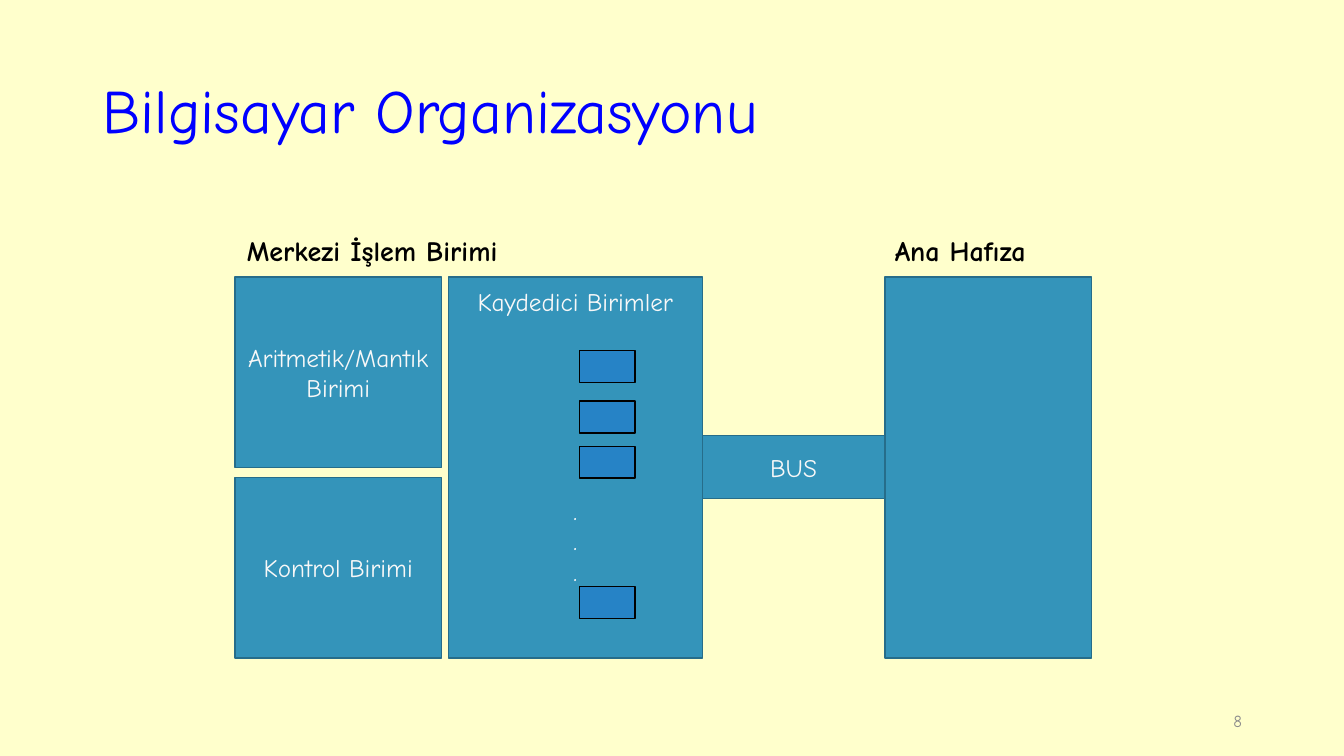
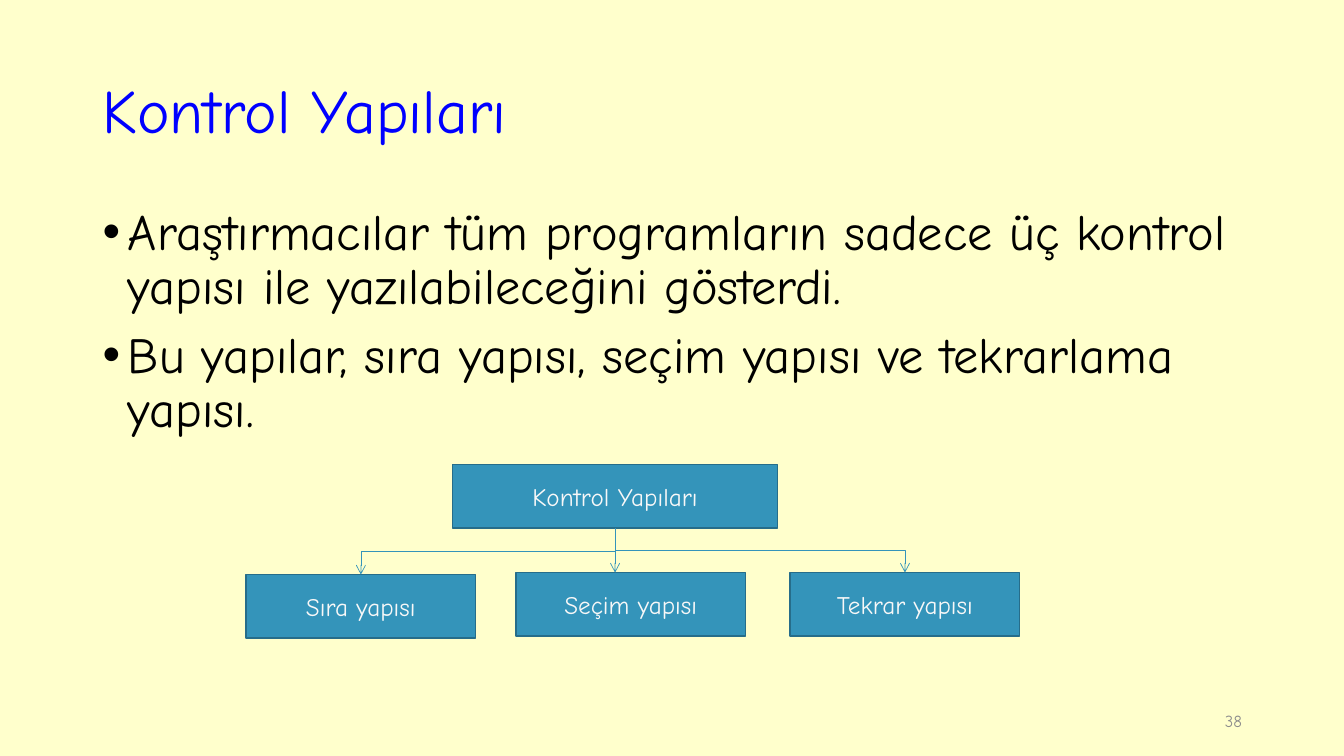
from dataclasses import dataclass

from lxml.etree import SubElement
from pptx import Presentation
from pptx.dml.color import RGBColor
from pptx.enum.shapes import MSO_CONNECTOR, MSO_SHAPE
from pptx.enum.text import MSO_ANCHOR, MSO_AUTO_SIZE, PP_ALIGN
from pptx.oxml.ns import qn
from pptx.shapes.autoshape import Shape
from pptx.shapes.shapetree import GroupShapes, SlideShapes
from pptx.slide import Slide
from pptx.text.text import TextFrame, _Paragraph
from pptx.util import Cm, Pt


@dataclass(frozen=True)
class Theme:
    font: str = "Comic Neue"
    background: str = "FFFFCC"
    title: str = "0000FF"
    text: str = "000000"
    box: str = "3494BA"
    box_line: str = "266D8A"
    box_text: str = "F8F8F8"
    register: str = "2683C6"
    number: str = "8C8C8C"
    title_size: int = 44
    body_size: int = 36
    label_size: int = 20
    box_size: int = 18
    number_size: int = 12


@dataclass(frozen=True)
class Box:
    """A rectangle measured in centimetres, with an optional text."""
    left: float
    top: float
    width: float
    height: float
    text: str = ""

    @property
    def center(self) -> float:
        return self.left + self.width / 2

    @property
    def bottom(self) -> float:
        return self.top + self.height

    def lengths(self) -> tuple[Cm, Cm, Cm, Cm]:
        return Cm(self.left), Cm(self.top), Cm(self.width), Cm(self.height)


Shapes = SlideShapes | GroupShapes
THEME = Theme()
TITLE = Box(2.33, 1.02, 29.21, 3.68)
BODY = Box(2.33, 5.08, 29.21, 12.09)
NUMBER = Box(23.93, 17.65, 7.62, 1.02)

ALU = Box(5.92, 6.98, 5.21, 4.8, "Aritmetik/Mantık Birimi")
CONTROL = Box(5.92, 12.04, 5.21, 4.54, "Kontrol Birimi")
REGISTERS = Box(11.3, 6.98, 6.4, 9.6, "Kaydedici Birimler")
BUS = Box(17.7, 10.97, 4.6, 1.6, "BUS")
MEMORY = Box(22.3, 6.98, 5.21, 9.6)
LABELS = [
    Box(5.97, 5.77, 9.3, 1.12, "Merkezi İşlem Birimi"),
    Box(22.3, 5.77, 5.21, 1.12, "Ana Hafıza"),
]
REGISTER_TOPS = [8.84, 10.11, 11.25, 14.78]

STRUCTURES = Box(11.4, 11.71, 8.2, 1.6, "Kontrol Yapıları")
STRUCTURE_KINDS = [
    Box(6.2, 14.48, 5.79, 1.6, "Sıra yapısı"),
    Box(13, 14.43, 5.79, 1.6, "Seçim yapısı"),
    Box(19.91, 14.43, 5.79, 1.6, "Tekrar yapısı"),
]
BULLETS = [
    "Araştırmacılar tüm programların sadece üç kontrol yapısı ile yazılabileceğini gösterdi.",
    "Bu yapılar, sıra yapısı, seçim yapısı ve tekrarlama yapısı.",
]


def add_run(p: _Paragraph, text: str, size: int, color: str, bold: bool = False) -> None:
    r = p.add_run()
    r.text = text
    r.font.name = THEME.font
    r.font.size = Pt(size)
    r.font.bold = bold
    r.font.color.rgb = RGBColor.from_string(color)


def add_paragraph(tf: TextFrame, first: bool) -> _Paragraph:
    return tf.paragraphs[0] if first else tf.add_paragraph()


def add_box(shapes: Shapes, box: Box, fill: str = THEME.box, line: str = THEME.box_line) -> Shape:
    sp = shapes.add_shape(MSO_SHAPE.RECTANGLE, *box.lengths())
    sp.shadow.inherit = False
    sp.fill.solid()
    sp.fill.fore_color.rgb = RGBColor.from_string(fill)
    sp.line.color.rgb = RGBColor.from_string(line)
    sp.line.width = Pt(1)
    tf = sp.text_frame
    tf.word_wrap = True
    tf.vertical_anchor = MSO_ANCHOR.MIDDLE
    if box.text:
        p = tf.paragraphs[0]
        p.alignment = PP_ALIGN.CENTER
        add_run(p, box.text, THEME.box_size, THEME.box_text)
    return sp


def add_text(shapes: Shapes, box: Box, size: int, color: str, bold: bool = False) -> TextFrame:
    tf = shapes.add_textbox(*box.lengths()).text_frame
    tf.word_wrap = True
    add_run(tf.paragraphs[0], box.text, size, color, bold)
    return tf


def add_arrow(shapes: Shapes, start: Box, end: Box) -> None:
    """Link two boxes downwards: straight if end lies under start's centre, else bent."""
    x1, y1, y2 = start.center, start.bottom, end.top
    if end.left <= x1 <= end.left + end.width:
        c = shapes.add_connector(MSO_CONNECTOR.STRAIGHT, Cm(x1), Cm(y1), Cm(x1), Cm(y2))
    else:
        # An elbow starts sideways, so it is drawn lying down and turned about its centre.
        x2 = end.center
        mid_x, mid_y = (x1 + x2) / 2, (y1 + y2) / 2
        half_w, half_h = (y2 - y1) / 2, abs(x2 - x1) / 2
        side = 1 if x2 < x1 else -1
        c = shapes.add_connector(
            MSO_CONNECTOR.ELBOW,
            Cm(mid_x - side * half_w), Cm(mid_y - half_h),
            Cm(mid_x + side * half_w), Cm(mid_y + half_h),
        )
        turn = 90 if side == 1 else 270
        c._element.spPr.find(qn("a:xfrm")).set("rot", str(turn * 60000))
    c.line.color.rgb = RGBColor.from_string(THEME.box)
    c.line.width = Pt(0.5)
    SubElement(c.line._get_or_add_ln(), qn("a:tailEnd"), type="arrow")
    SubElement(c._element.spPr, qn("a:effectLst"))


def place(sp: Shape, box: Box, anchor: MSO_ANCHOR) -> TextFrame:
    """Move a placeholder and return its text frame, ready to fill."""
    sp.left, sp.top, sp.width, sp.height = box.lengths()
    tf = sp.text_frame
    tf.word_wrap = True
    tf.auto_size = MSO_AUTO_SIZE.NONE
    tf.vertical_anchor = anchor
    return tf


def add_slide(prs: Presentation, layout: str, title: str, number: int) -> Slide:
    s = prs.slides.add_slide(prs.slide_layouts.get_by_name(layout))
    p = place(s.shapes.title, TITLE, MSO_ANCHOR.MIDDLE).paragraphs[0]
    p.alignment = PP_ALIGN.LEFT
    p.line_spacing = 0.9
    add_run(p, title, THEME.title_size, THEME.title)

    box = Box(NUMBER.left, NUMBER.top, NUMBER.width, NUMBER.height, str(number))
    tf = add_text(s.shapes, box, THEME.number_size, THEME.number)
    tf.vertical_anchor = MSO_ANCHOR.MIDDLE
    tf.paragraphs[0].alignment = PP_ALIGN.RIGHT
    return s


def fill_bullets(s: Slide, bullets: list[str]) -> None:
    tf = place(s.placeholders[1], BODY, MSO_ANCHOR.TOP)
    for i, text in enumerate(bullets):
        p = add_paragraph(tf, i == 0)
        p.line_spacing = 0.9
        p.space_before = Pt(10)
        pPr = p._p.get_or_add_pPr()
        pPr.set("marL", str(Cm(0.64)))
        pPr.set("indent", str(-Cm(0.64)))
        add_run(p, text, THEME.body_size, THEME.text)


def add_registers(shapes: Shapes) -> None:
    tf = add_box(shapes, REGISTERS).text_frame
    tf.vertical_anchor = MSO_ANCHOR.TOP
    tf.margin_top = Cm(0.23)
    for i in range(3):
        p = tf.add_paragraph()
        p.alignment = PP_ALIGN.CENTER
        p.space_before = Pt(128 if i == 0 else 0)
        add_run(p, ".", THEME.box_size, THEME.box_text)
    for top in REGISTER_TOPS:
        add_box(shapes, Box(14.6, top, 1.4, 0.8), THEME.register, THEME.text)


def build_organization(prs: Presentation) -> None:
    s = add_slide(prs, "Title Only", "Bilgisayar Organizasyonu", 8)
    shapes = s.shapes.add_group_shape().shapes
    for box in (ALU, CONTROL):
        add_box(shapes, box)
    add_registers(shapes)
    for box in (BUS, MEMORY):
        add_box(shapes, box)
    for label in LABELS:
        add_text(shapes, label, THEME.label_size, THEME.text, bold=True)


def build_control_structures(prs: Presentation) -> None:
    s = add_slide(prs, "Title and Content", "Kontrol Yapıları", 38)
    fill_bullets(s, BULLETS)
    add_box(s.shapes, STRUCTURES)
    for kind in STRUCTURE_KINDS:
        add_box(s.shapes, kind)
        add_arrow(s.shapes, STRUCTURES, kind)


def main() -> None:
    prs = Presentation()
    prs.slide_width, prs.slide_height = Cm(33.87), Cm(19.05)
    fill = prs.slide_master.background.fill
    fill.solid()
    fill.fore_color.rgb = RGBColor.from_string(THEME.background)
    build_organization(prs)
    build_control_structures(prs)
    prs.save("out.pptx")


if __name__ == "__main__":
    main()
